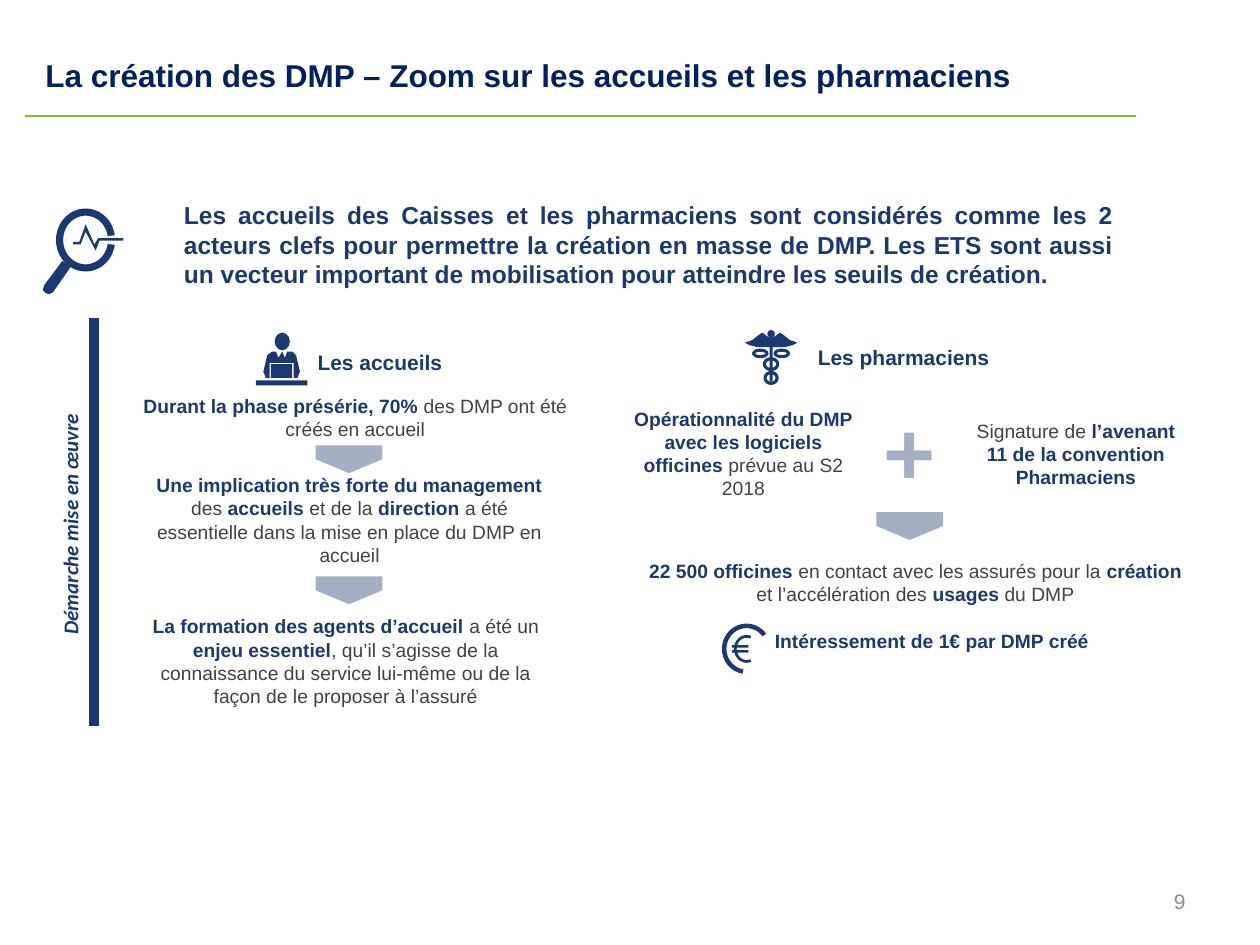
from collections import namedtuple
from math import cos, radians, sin

from lxml.etree import SubElement
from pptx import Presentation
from pptx.dml.color import RGBColor
from pptx.enum.shapes import MSO_CONNECTOR as Link, MSO_SHAPE as Kind
from pptx.enum.text import MSO_ANCHOR as Anchor, MSO_AUTO_SIZE as Fit, PP_ALIGN as Align
from pptx.oxml.ns import qn
from pptx.util import Inches, Pt

NAVY = RGBColor(0x1C, 0x38, 0x71)
INK = RGBColor(0x00, 0x20, 0x60)
GREY = RGBColor(0x41, 0x41, 0x43)
PALE = RGBColor(0x8C, 0x8C, 0x8C)
STEEL = RGBColor(0xA4, 0xAF, 0xC6)
GREEN = RGBColor(0x7F, 0xC3, 0x1C)

WIDE, HIGH = Inches(10), Inches(7.5)
COLS = 100
CELL = WIDE / COLS


class Box(namedtuple("Box", "x y w h")):
    """Area measured in grid cells."""

    def area(self, x, y, w, h):
        """Return an area offset from this one's corner."""
        return Box(self.x + x, self.y + y, w, h)

    def emu(self):
        """Return the area in slide units."""
        return [round(v * CELL) for v in self]


def write(shape, words, size=11, color=GREY, strong=NAVY, bold=False, slant=False,
          font="Arial", align=Align.CENTER, anchor=Anchor.MIDDLE, lead=None,
          inset=(0.09, 0.04), wrap=True):
    """Fill a shape with text whose starred parts are strong."""
    frame = shape.text_frame
    frame.auto_size = Fit.NONE
    frame.word_wrap = wrap
    frame.vertical_anchor = anchor
    frame.margin_left = frame.margin_right = Inches(inset[0])
    frame.margin_top = frame.margin_bottom = Inches(inset[1])
    para = frame.paragraphs[0]
    para.alignment = align
    if lead:
        para.line_spacing = lead
    for i, piece in enumerate(words.split("*")):
        if piece:
            run = para.add_run()
            run.text = piece
            run.font.name, run.font.size = font, Pt(size)
            run.font.bold, run.font.italic = bold or i % 2 == 1, slant
            run.font.color.rgb = strong if i % 2 else color


def label(slide, box, words, **look):
    """Add a text box with formatted words."""
    shape = slide.shapes.add_textbox(*box.emu())
    write(shape, words, **look)
    return shape


def paint(shape, color=NAVY):
    """Give a shape a flat fill without line or shadow."""
    shape.shadow.inherit = False
    shape.fill.solid()
    shape.fill.fore_color.rgb = color
    shape.line.fill.background()
    return shape


def solid(slide, kind, box):
    """Add a flat preset shape."""
    return paint(slide.shapes.add_shape(kind, *box.emu()))


def trace(slide, box, points):
    """Add a closed outline from points relative to a box."""
    dots = [((box.x + x) * CELL, (box.y + y) * CELL) for x, y in points]
    pen = slide.shapes.build_freeform(*dots[0], scale=1.0)
    pen.add_line_segments(dots[1:], close=True)
    return paint(pen.convert_to_shape())


def band(x, y, rx, ry, thick, start=0, end=360):
    """Return the outline of a curved band around a centre."""
    turns = [radians(start + (end - start) * i / 48) for i in range(49)]
    outer = [(x + rx * cos(t), y + ry * sin(t)) for t in turns]
    inner = [(x + (rx - thick) * cos(t), y + (ry - thick) * sin(t)) for t in turns]
    return outer + inner[::-1]


def lens(slide, box):
    """Draw the magnifier with its pulse line."""
    trace(slide, box, band(3.4, 2.45, 2.35, 2.5, 0.57, 9, 351))
    trace(slide, box, [(1.55, 4.1), (2.2, 4.6), (0.8, 6.6), (0.5, 6.75), (0.2, 6.65),
                       (0, 6.4), (0.1, 6.05)])
    trace(slide, box, [(6.4, 2.5), (4.5, 2.5), (4.2, 3.3), (3.4, 1.8), (3, 2.8), (2.4, 2.8),
                       (2.4, 2.6), (2.9, 2.6), (3.4, 1.2), (4.1, 2.8), (4.4, 2.3), (6.4, 2.3)])


def clerk(slide, box):
    """Draw the clerk behind a desk."""
    trace(slide, box, [(0.8, 3.6), (1.1, 3.6), (1.1, 2.4), (3, 2.4), (3, 3.6), (3.3, 3.6),
                       (3.5, 3.1), (3.2, 1.8), (2.9, 1.5), (2.5, 1.5), (2.3, 2), (2.1, 1.5),
                       (1.8, 2), (1.6, 1.5), (1.3, 1.5), (0.9, 1.8), (0.6, 3.1)])
    solid(slide, Kind.OVAL, box.area(1.5, 0, 1.2, 1.4))
    solid(slide, Kind.RECTANGLE, box.area(1.2, 2.5, 1.7, 1.1))
    solid(slide, Kind.RECTANGLE, box.area(0, 3.8, 4.1, 0.4))


def staff(slide, box):
    """Draw the winged staff with its coils."""
    mid = box.w / 2
    wing = [(0, 0.6), (0.3, 0.5), (0.7, 0.2), (1, 0.4), (1.5, 0.8), (2.1, 1), (1.7, 1.2),
            (1.1, 1.35), (0, 1.35)]
    trace(slide, box, [(mid + x, y) for x, y in wing] + [(mid - x, y) for x, y in wing[::-1]])
    solid(slide, Kind.OVAL, box.area(mid - 0.3, 0, 0.6, 0.6))
    solid(slide, Kind.RECTANGLE, box.area(mid - 0.12, 0.6, 0.24, 3.5))
    for shift, y, rx, ry in ((-0.85, 1.85, 0.65, 0.38), (0.85, 1.85, 0.65, 0.38),
                             (0, 2.7, 0.65, 0.55), (0, 3.8, 0.6, 0.55)):
        trace(slide, box, band(mid + shift, y, rx, ry, 0.25))


def euro(slide, box):
    """Draw the euro sign in an open ring."""
    trace(slide, box, band(1.95, 2, 1.95, 2, 0.36, 99, 323))
    trace(slide, box, band(1.95, 2, 1, 1.1, 0.22, 68, 292))
    for y in (1.7, 2.1):
        solid(slide, Kind.RECTANGLE, box.area(0.8, y, 1.3, 0.2))


def arrow(slide, box):
    """Add a translucent arrow pointing down."""
    shape = solid(slide, Kind.PENTAGON, box)
    shape.rotation = 90
    tint = shape._element.spPr.find(".//" + qn("a:srgbClr"))
    SubElement(tint, qn("a:alpha"), val="40000")


def header(slide, box):
    """Place the title and the rule below it."""
    title = slide.shapes.title
    title.left, title.top, title.width, title.height = box.area(0.6, 0, 82.4, 5.5).emu()
    write(title, "La création des DMP – Zoom sur les accueils et les pharmaciens", size=18,
          color=INK, bold=True, align=Align.LEFT, lead=0.8, inset=(0.1, 0.05))
    x, y, w, h = box.emu()
    rule = slide.shapes.add_connector(Link.STRAIGHT, x, y + h, x + w, y + h)
    rule.line.color.rgb, rule.line.width = GREEN, Pt(1)
    SubElement(rule._element.spPr, qn("a:effectLst"))


def intro(slide, box):
    """Place the lead statement beside its icon."""
    lens(slide, box.area(0, 1.1, 6.3, 6.8))
    label(slide, box.area(10.3, 0, 75.6, 8.2),
          "Les accueils des Caisses et les pharmaciens sont considérés comme les 2 acteurs clefs "
          "pour permettre la création en masse de DMP. Les ETS sont aussi un vecteur important "
          "de mobilisation pour atteindre les seuils de création.",
          size=14, color=NAVY, bold=True, align=Align.JUSTIFY, anchor=Anchor.TOP)


def margin(slide, box):
    """Place the side bar and its upright caption."""
    bar = solid(slide, Kind.RECTANGLE, box)
    bar.line.color.rgb, bar.line.width = NAVY, Pt(0.75)
    note = label(slide, box.area(-15.4, 15.3, 27.7, 2), "Démarche mise en œuvre", size=12,
                 color=NAVY, bold=True, slant=True, font="Calibri", anchor=Anchor.TOP,
                 inset=(0, 0))
    note.rotation = 270


def heading(slide, box, words):
    """Place the name of a column."""
    label(slide, box, words, size=12, color=NAVY, bold=True, align=Align.LEFT,
          anchor=Anchor.TOP, lead=0.8)


def desks(slide, box):
    """Place the column on front desks."""
    clerk(slide, box.area(10.6, 1.1, 4.1, 4.2))
    heading(slide, box.area(14.6, 2.4, 16.9, 5.1), "Les accueils")
    label(slide, box.area(0, 5.3, 37, 5),
          "*Durant la phase présérie, 70% *des DMP ont été créés en accueil")
    label(slide, box.area(0.9, 12, 34.3, 7.9),
          "*Une implication très forte du management *des *accueils *et de la *direction *"
          "a été essentielle dans la mise en place du DMP en accueil")
    label(slide, box.area(0.6, 23.2, 34.3, 7.9),
          "*La formation des agents d’accueil *a été un *enjeu essentiel*, qu’il s’agisse de la "
          "connaissance du service lui-même ou de la façon de le proposer à l’assuré")
    for y in (8.5, 18.9):
        arrow(slide, box.area(16.9, y, 2.2, 5.3))


def chemists(slide, box):
    """Place the column on pharmacists."""
    staff(slide, box.area(9.7, 0.9, 4.2, 4.4))
    heading(slide, box.area(14.6, 2, 16.9, 2.6), "Les pharmaciens")
    label(slide, box.area(0, 6, 19.2, 9.4),
          "*Opérationnalité du DMP avec les logiciels officines *prévue au S2 2018")
    label(slide, box.area(19.8, 7.4, 5.9, 7.8), "+", size=51, color=STEEL, bold=True,
          align=Align.LEFT, anchor=Anchor.TOP, lead=0.8, wrap=False)
    label(slide, box.area(26.4, 6, 19.2, 9.4),
          "Signature de *l’avenant 11 de la convention Pharmaciens*")
    arrow(slide, box.area(21.7, 13.8, 2.2, 5.3))
    label(slide, box.area(0.5, 18.4, 45.5, 5),
          "*22 500 officines *en contact avec les assurés pour la *création *"
          "et l’accélération des *usages *du DMP")
    euro(slide, box.area(7.9, 24.2, 3.5, 4))
    label(slide, box.area(11.2, 24.2, 31, 2.8), "*Intéressement de 1€ par DMP créé*",
          align=Align.LEFT, anchor=Anchor.TOP)


def main():
    """Build and save the slide."""
    deck = Presentation()
    deck.slide_width, deck.slide_height = WIDE, HIGH
    slide = deck.slides.add_slide(deck.slide_layouts[5])
    header(slide, Box(2, 3.5, 88.2, 5.7))
    intro(slide, Box(3.4, 15.5, 85.9, 8.2))
    margin(slide, Box(7.1, 25.3, 0.7, 32.3))
    desks(slide, Box(9.7, 25.3, 37, 32.3))
    chemists(slide, Box(49.4, 25.3, 46, 32.3))
    label(slide, Box(71.7, 69.5, 23.3, 4), "9", size=12, color=PALE, align=Align.RIGHT)
    deck.save("out.pptx")


if __name__ == "__main__":
    main()
